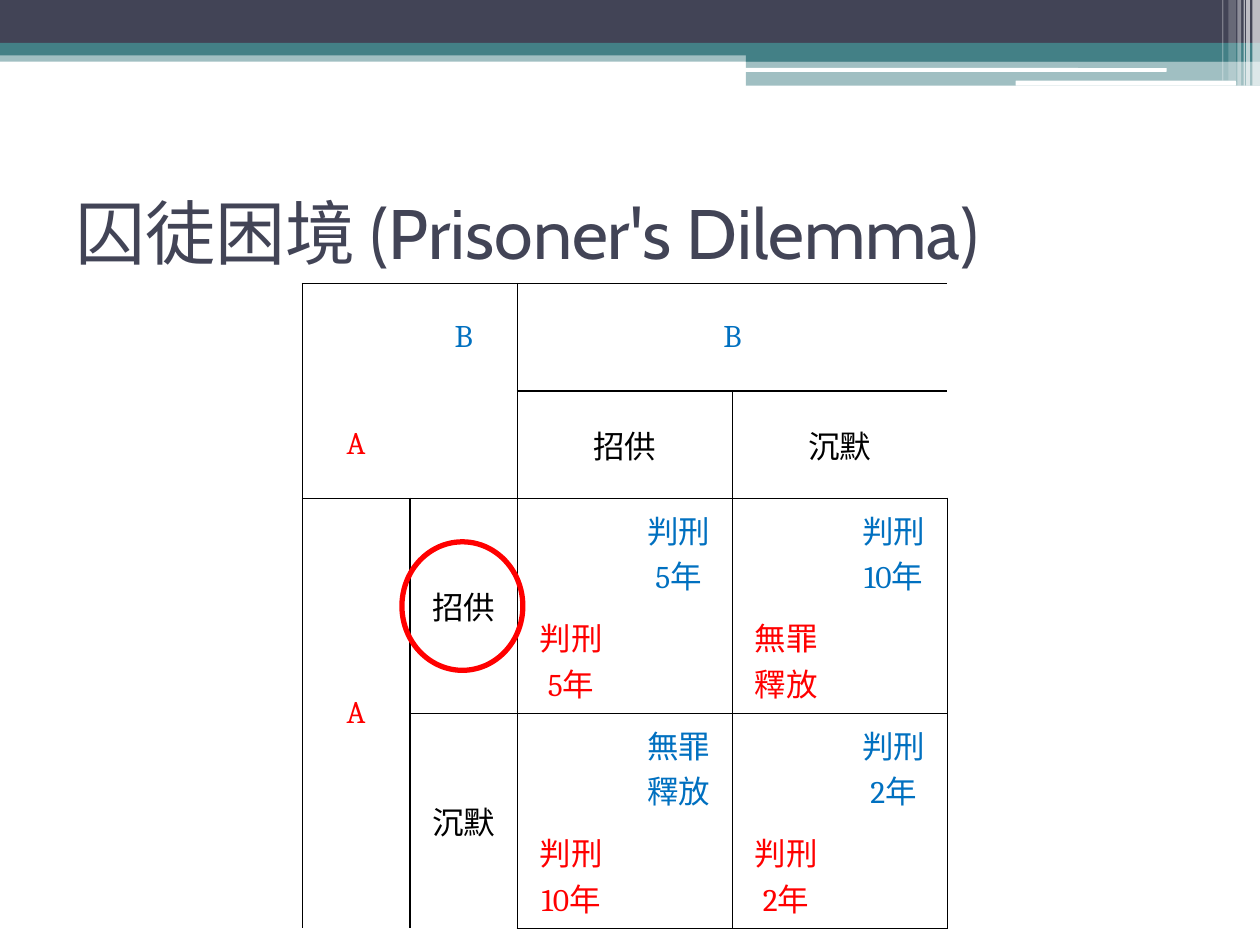
from lxml.etree import SubElement
from pptx import Presentation
from pptx.dml.color import RGBColor
from pptx.enum.shapes import MSO_SHAPE
from pptx.enum.text import MSO_ANCHOR, PP_ALIGN
from pptx.oxml.ns import qn
from pptx.util import Inches, Pt

NAVY = RGBColor(0x42, 0x44, 0x56)
TEAL = RGBColor(0x43, 0x80, 0x86)
WHITE = RGBColor(0xFF, 0xFF, 0xFF)
BLACK = RGBColor(0x00, 0x00, 0x00)
RED = RGBColor(0xFF, 0x00, 0x00)
BLUE = RGBColor(0x00, 0x70, 0xC0)

GRID_SIZE = 6
CELL_SIDE = 5.12 / GRID_SIZE

# Header bands: left, top, width, height, colour, opacity in percent
BANDS = [
    (0, 0.4, 10, 0.09, TEAL, 50),
    (0, 0, 10, 0.34, NAVY, 100),
    (0, 0.34, 10, 0.1, TEAL, 100),
    (5.92, 0.39, 4.08, 0.1, TEAL, 100),
    (5.92, 0.48, 4.08, 0.2, TEAL, 50),
]
HIGHLIGHTS = [(5.91, 0.54, 3.35, 0.03), (8.06, 0.64, 1.75, 0.04)]
# Stripes at the right edge: left, width, height, opacity in percent
STRIPES = [
    (9.94, 0.06, 0.68, 65),
    (9.89, 0.03, 0.68, 65),
    (9.87, 0.01, 0.68, 60),
    (9.82, 0.03, 0.68, 40),
    (9.75, 0.06, 0.64, 20),
    (9.7, 0.01, 0.64, 30),
]

# Merged headings: row, column, rows, columns, text, colour
HEADINGS = [
    (0, 2, 1, 4, "B", BLUE),
    (1, 2, 1, 2, "招供", BLACK),
    (1, 4, 1, 2, "沉默", BLACK),
    (2, 0, 4, 1, "A", RED),
    (2, 1, 2, 1, "招供", BLACK),
    (4, 1, 2, 1, "沉默", BLACK),
]
# Two-by-two blocks: row, column, A's text (lower left), B's text (upper right)
OUTCOMES = [
    (0, 0, "A", "B"),
    (2, 2, "判刑\n5年", "判刑\n5年"),
    (2, 4, "無罪\n釋放", "判刑\n10年"),
    (4, 2, "判刑\n10年", "無罪釋放"),
    (4, 4, "判刑\n2年", "判刑\n2年"),
]


def apply_format(target, values):
    for name, value in values.items():
        setattr(target, name, value)


def add_block(slide, box, color, opacity=100, kind=MSO_SHAPE.RECTANGLE):
    block = slide.shapes.add_shape(kind, *map(Inches, box))
    block.shadow.inherit = False
    block.line.fill.background()
    block.fill.solid()
    block.fill.fore_color.rgb = color
    if opacity < 100:
        tint = block.fill._xPr.find(".//" + qn("a:srgbClr"))
        SubElement(tint, qn("a:alpha"), val=str(opacity * 1000))


def add_header(slide):
    for *box, color, opacity in BANDS:
        add_block(slide, box, color, opacity)
    for box in HIGHLIGHTS:
        add_block(slide, box, WHITE, kind=MSO_SHAPE.ROUNDED_RECTANGLE)
    for left, width, height, opacity in STRIPES:
        add_block(slide, (left, 0, width, height), WHITE, opacity)


def add_title(slide, text):
    title = slide.shapes.add_textbox(Inches(0.5), Inches(1.25), Inches(9), Inches(1.17))
    frame = title.text_frame
    apply_format(frame, {"word_wrap": True, "vertical_anchor": MSO_ANCHOR.MIDDLE})
    frame.text = text
    font = frame.paragraphs[0].runs[0].font
    apply_format(font, {"name": "Cabin", "size": Pt(40)})
    font.color.rgb = NAVY


def write_cell(cell, text, color):
    cell.text = text
    for paragraph in cell.text_frame.paragraphs:
        paragraph.alignment = PP_ALIGN.CENTER
        for run in paragraph.runs:
            apply_format(run.font, {"name": "Cambria", "size": Pt(18), "bold": False})
            run.font.color.rgb = color


def set_borders(cell, sides):
    """Draw a black line on the sides marked True and none on the others."""
    properties = cell._tc.get_or_add_tcPr()
    for side, drawn in sides.items():
        line = SubElement(properties, qn("a:ln" + side), w=str(Pt(1)))
        if drawn:
            fill = SubElement(line, qn("a:solidFill"))
            SubElement(fill, qn("a:srgbClr"), val=str(BLACK))
        else:
            SubElement(line, qn("a:noFill"))


def outline(table, row, column, rows, columns):
    """Frame a block of cells on its outer sides only."""
    for r in range(rows):
        for c in range(columns):
            cell = table.cell(row + r, column + c)
            set_borders(cell, {
                "L": c == 0, "R": c == columns - 1,
                "T": r == 0, "B": r == rows - 1,
            })
            cell.fill.background()
            cell.vertical_anchor = MSO_ANCHOR.MIDDLE


def add_payoff_table(slide):
    side = Inches(CELL_SIDE * GRID_SIZE)
    table = slide.shapes.add_table(
        GRID_SIZE, GRID_SIZE, Inches(2.4), Inches(2.25), side, side).table
    apply_format(table, {"first_row": False, "horz_banding": False})
    for column in table.columns:
        column.width = Inches(CELL_SIDE)
    for row in table.rows:
        row.height = Inches(CELL_SIDE)

    # Strategy headings
    for row, column, rows, columns, text, color in HEADINGS:
        outline(table, row, column, rows, columns)
        heading = table.cell(row, column)
        heading.merge(table.cell(row + rows - 1, column + columns - 1))
        write_cell(heading, text, color)

    # Corner and outcomes
    for row, column, a_text, b_text in OUTCOMES:
        outline(table, row, column, 2, 2)
        write_cell(table.cell(row + 1, column), a_text, RED)
        write_cell(table.cell(row, column + 1), b_text, BLUE)


def add_choice_ring(slide):
    ring = slide.shapes.add_shape(
        MSO_SHAPE.OVAL, Inches(3.19), Inches(4.3), Inches(0.96), Inches(1.02))
    ring.shadow.inherit = False
    ring.fill.background()
    ring.line.color.rgb = RED
    ring.line.width = Pt(3)


def main():
    presentation = Presentation()
    apply_format(presentation, {"slide_width": Inches(10), "slide_height": Inches(7.5)})
    slide = presentation.slides.add_slide(presentation.slide_layouts[6])
    add_header(slide)
    add_title(slide, "囚徒困境 (Prisoner's Dilemma)")
    add_payoff_table(slide)
    add_choice_ring(slide)
    presentation.save("out.pptx")


if __name__ == "__main__":
    main()
